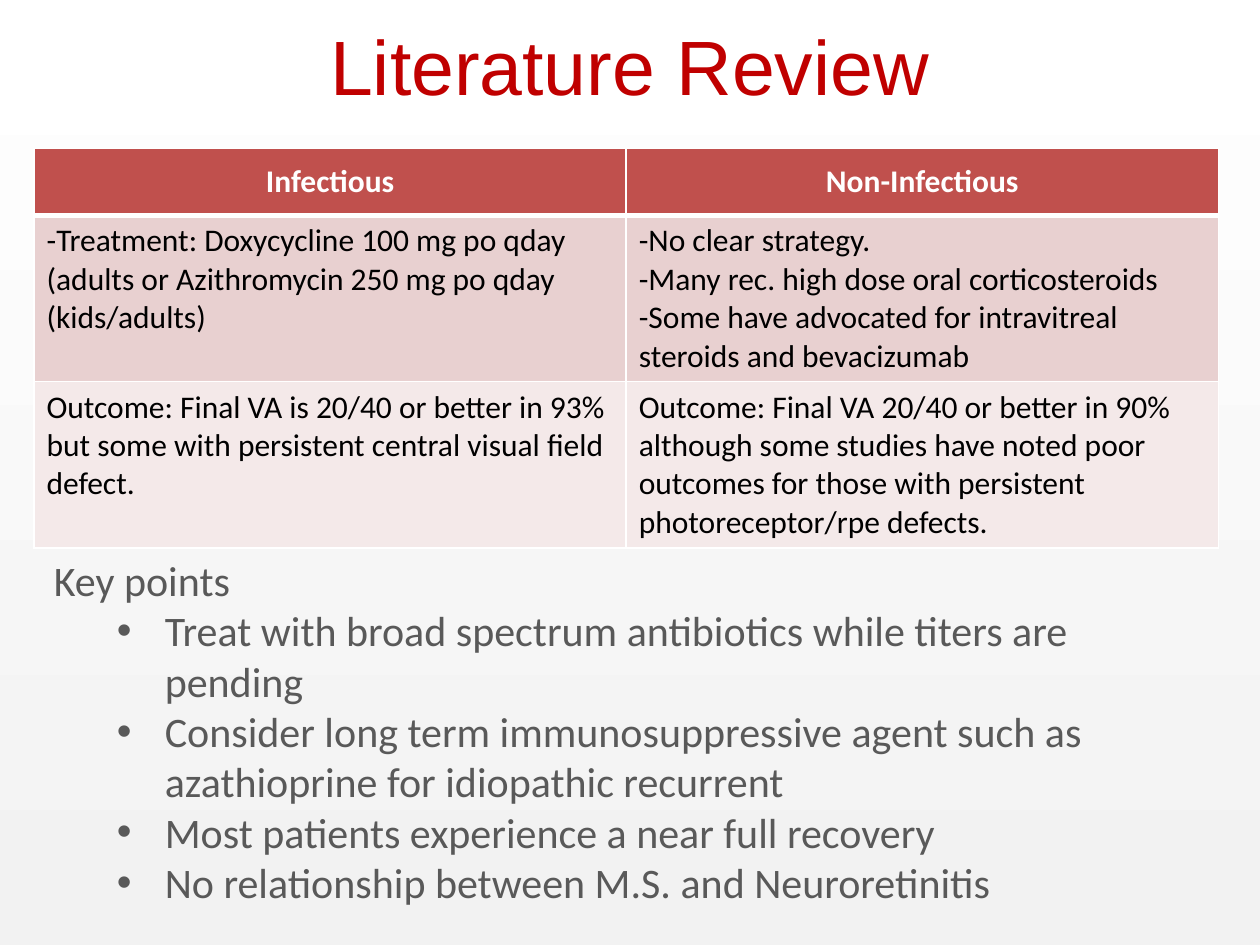
from lxml import etree
from pptx import Presentation
from pptx.enum import shapes, text
from pptx.oxml import ns
from pptx.util import Inches, Pt
from pptx.dml.color import RGBColor

# Content
TITLE = "Literature Review"
ROWS = [
    (["Infectious"], ["Non-Infectious"]),
    (["-Treatment: Doxycycline 100 mg po qday (adults or Azithromycin 250 mg po qday (kids/adults)"],
     ["-No clear strategy.",
      "-Many rec. high dose oral corticosteroids",
      "-Some have advocated for intravitreal steroids and bevacizumab"]),
    (["Outcome: Final VA is 20/40 or better in 93% but some with persistent central visual field defect."],
     ["Outcome: Final VA 20/40 or better in 90% although some studies have noted poor outcomes "
      "for those with persistent photoreceptor/rpe defects."]),
]
KEY_HEADING = "Key points"
KEY_POINTS = [
    "Treat with broad spectrum antibiotics while titers are pending",
    "Consider long term immunosuppressive agent such as azathioprine for idiopathic recurrent",
    "Most patients experience a near full recovery",
    "No relationship between M.S. and Neuroretinitis",
]

# Formats
COLORS = {"title": "C00000", "header": "C0504D", "row_dark": "E8D0D0", "row_light": "F4E9E9",
          "white": "FFFFFF", "black": "000000", "grey": "595959", "page_grey": "F2F2F2"}
FONTS = {
    "title": {"name": "Arial", "size": Pt(44), "bold": False},
    "header": {"name": "Calibri", "size": Pt(18), "bold": True},
    "cell": {"name": "Calibri", "size": Pt(18), "bold": False},
    "key": {"name": "Calibri", "size": Pt(24), "bold": False},
}
ROW_STYLES = [  # height, fill, font, text colour, bottom border in points
    (0.53, "header", "header", "white", 3),
    (1.32, "row_dark", "cell", "black", 1),
    (1.32, "row_light", "cell", "black", 1),
]
COLUMN_WIDTH = 4.7


def rgb(color):
    return RGBColor.from_string(COLORS[color])


def write(frame, lines, font, color, alignment=text.PP_ALIGN.LEFT):
    for index, line in enumerate(lines):
        paragraph = frame.paragraphs[0] if index == 0 else frame.add_paragraph()
        paragraph.alignment = alignment
        run = paragraph.add_run()
        run.text = line
        for name, value in FONTS[font].items():
            setattr(run.font, name, value)
        run.font.color.rgb = rgb(color)


def add_text_box(slide, box, anchor):
    frame = slide.shapes.add_textbox(*map(Inches, box)).text_frame
    frame.word_wrap = True
    frame.vertical_anchor = anchor
    return frame


def set_borders(cell, bottom_width):
    properties = cell._tc.get_or_add_tcPr()
    widths = {"a:lnL": 1, "a:lnR": 1, "a:lnT": 1, "a:lnB": bottom_width}
    for index, (tag, width) in enumerate(widths.items()):
        line = etree.Element(ns.qn(tag), w=str(Pt(width)))
        fill = etree.SubElement(line, ns.qn("a:solidFill"))
        etree.SubElement(fill, ns.qn("a:srgbClr"), val=COLORS["white"])
        properties.insert(index, line)


def add_bullet(paragraph):
    properties = paragraph._p.get_or_add_pPr()
    properties.set("marL", str(Inches(0.88)))
    properties.set("indent", str(Inches(-0.38)))
    etree.SubElement(properties, ns.qn("a:buFont"), typeface="Arial")
    etree.SubElement(properties, ns.qn("a:buChar"), char="•")


def add_background(slide, width, height):
    page = slide.shapes.add_shape(shapes.MSO_SHAPE.RECTANGLE, 0, 0, width, height)
    page.shadow.inherit = False
    page.line.fill.background()
    page.fill.gradient()
    page.fill.gradient_angle = 90
    for stop, position, color in zip(page.fill.gradient_stops, (0, 1), ("page_grey", "white")):
        stop.position = position
        stop.color.rgb = rgb(color)


def add_comparison(slide):
    heights = [style[0] for style in ROW_STYLES]
    box = (0.27, 1.18, 2 * COLUMN_WIDTH, sum(heights))
    table = slide.shapes.add_table(len(ROWS), 2, *map(Inches, box)).table
    for column in table.columns:
        column.width = Inches(COLUMN_WIDTH)
    for row, cells, style in zip(table.rows, ROWS, ROW_STYLES):
        height, fill, font, color, bottom_width = style
        row.height = Inches(height)
        is_header = font == "header"
        for cell, lines in zip(row.cells, cells):
            cell.fill.solid()
            cell.fill.fore_color.rgb = rgb(fill)
            set_borders(cell, bottom_width)
            cell.vertical_anchor = text.MSO_ANCHOR.MIDDLE if is_header else text.MSO_ANCHOR.TOP
            write(cell.text_frame, lines, font, color,
                  text.PP_ALIGN.CENTER if is_header else text.PP_ALIGN.LEFT)


def main():
    presentation = Presentation()
    presentation.slide_width, presentation.slide_height = Inches(10), Inches(7.5)
    slide = presentation.slides.add_slide(presentation.slide_layouts[6])
    add_background(slide, presentation.slide_width, presentation.slide_height)

    # Title
    title = add_text_box(slide, (0, -0.11, 10, 1.25), text.MSO_ANCHOR.MIDDLE)
    write(title, [TITLE], "title", "title", text.PP_ALIGN.CENTER)

    # Treatment and outcome table
    add_comparison(slide)

    # Key points
    key_points = add_text_box(slide, (0.33, 4.35, 9.17, 2.93), text.MSO_ANCHOR.TOP)
    write(key_points, [KEY_HEADING, *KEY_POINTS], "key", "grey")
    for paragraph in key_points.paragraphs[1:]:
        paragraph.level = 1
        add_bullet(paragraph)

    presentation.save("out.pptx")


if __name__ == "__main__":
    main()
